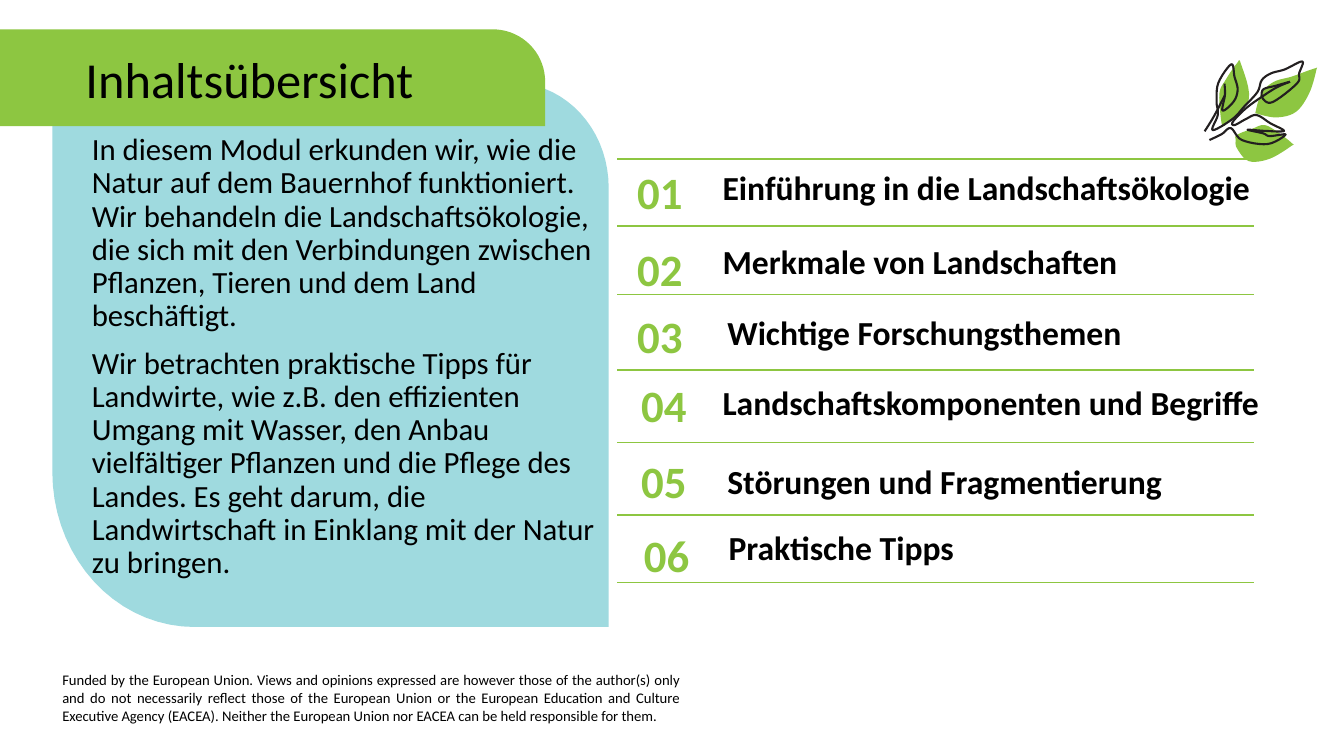
"""Build the overview slide of a module on landscape ecology."""
from dataclasses import dataclass
from math import cos, radians, sin

from lxml.etree import SubElement
from pptx import Presentation
from pptx.dml.color import RGBColor
from pptx.enum.shapes import MSO_CONNECTOR
from pptx.enum.text import MSO_ANCHOR, MSO_AUTO_SIZE, PP_ALIGN
from pptx.oxml.ns import qn
from pptx.util import Cm, Pt

Point = tuple[float, float]
GREEN, AQUA, INK, BLACK = "8DC641", "9FDADF", "231F20", "000000"
RULE_LEFT, RULE_RIGHT = 15.54, 31.6
RULE_TOPS = (4.01, 5.69, 7.42, 9.32, 11.15, 12.98, 14.68)


@dataclass
class Topic:
    title: str
    number_at: Point
    title_at: Point
    width: float = 12.4


TOPICS = [
    Topic("Einführung in die Landschaftsökologie", (15.65, 3.96), (17.96, 3.84), 14.76),
    Topic("Merkmale von Landschaften", (15.65, 5.89), (17.96, 5.69)),
    Topic("Wichtige Forschungsthemen", (15.65, 7.59), (18.08, 7.47)),
    Topic("Landschaftskomponenten und Begriffe", (15.75, 9.32), (17.96, 9.25), 14.38),
    Topic("Störungen und Fragmentierung", (15.75, 11.23), (18.08, 11.23)),
    Topic("Praktische Tipps", (15.82, 13.11), (18.11, 12.9)),
]

INTRO = [
    "In diesem Modul erkunden wir, wie die Natur auf dem Bauernhof funktioniert. "
    "Wir behandeln die Landschaftsökologie, die sich mit den Verbindungen zwischen "
    "Pflanzen, Tieren und dem Land beschäftigt.",
    "Wir betrachten praktische Tipps für Landwirte, wie z.B. den effizienten Umgang "
    "mit Wasser, den Anbau vielfältiger Pflanzen und die Pflege des Landes. Es geht "
    "darum, die Landwirtschaft in Einklang mit der Natur zu bringen.",
]

FUNDING = (
    "Funded by the European Union. Views and opinions expressed are however those of "
    "the author(s) only and do not necessarily reflect those of the European Union or "
    "the European Education and Culture Executive Agency (EACEA). Neither the European "
    "Union nor EACEA can be held responsible for them."
)

LEAVES = [
    [(30.91, 3.12), (31.47, 2.51), (31.27, 1.6), (31.17, 1.6), (30.89, 2.01),
     (30.73, 2.36), (30.78, 3.07), (30.84, 3.15)],
    [(32.66, 2.82), (32.99, 2.36), (33.17, 1.78), (33.12, 1.73), (32.56, 1.93),
     (32.11, 2.06), (31.8, 2.34), (31.65, 2.79), (31.7, 2.87), (32.18, 2.96)],
    [(32.54, 3.68), (32.56, 3.61), (32.16, 3.3), (31.85, 3.15), (31.55, 3.25),
     (31.27, 3.35), (31.14, 3.43), (31.14, 3.51), (31.17, 3.73), (31.47, 4.06),
     (32.0, 4.0)],
]

TWIGS = [
    [(30.66, 2.62), (30.7, 2.1), (31.03, 1.62), (31.11, 1.93), (31.19, 2.26),
     (31.09, 2.56), (30.81, 2.79), (30.87, 2.4), (30.86, 2.11)],
    [(30.87, 2.4), (30.67, 2.79), (30.53, 3.04), (30.36, 3.31)],
    [(30.66, 2.62), (30.69, 2.9), (30.56, 3.28), (31.06, 3.0), (31.37, 2.67),
     (31.69, 2.32), (31.8, 2.02), (32.03, 1.85), (32.38, 1.75), (32.82, 1.55),
     (32.74, 1.85), (32.69, 2.1), (32.08, 2.57), (31.83, 2.49), (31.83, 2.26),
     (32.16, 2.16), (32.51, 2.06)],
    [(32.51, 2.06), (32.18, 2.2), (31.83, 2.42), (31.4, 2.73), (31.07, 3.07),
     (31.12, 3.15), (31.4, 3.0), (31.67, 2.9), (32.02, 3.11), (32.36, 3.3),
     (31.9, 3.3), (31.44, 3.27), (31.83, 3.36), (32.0, 3.43), (32.4, 3.39),
     (31.95, 3.63), (31.3, 3.53), (31.02, 3.23), (30.79, 3.38), (30.48, 3.53)],
]


def colour(code: str) -> RGBColor:
    return RGBColor.from_string(code)


def corner(centre: Point, radius: Point, start: int) -> list[Point]:
    angles = [radians(start + step) for step in range(0, 91, 5)]
    return [(centre[0] + radius[0] * cos(a), centre[1] + radius[1] * sin(a)) for a in angles]


def curve(knots: list[Point], closed: bool, steps: int = 6) -> list[Point]:
    ends = (knots[-1:], knots[:2]) if closed else (knots[:1], knots[-1:])
    padded = ends[0] + knots + ends[1]
    points = []
    for a, b, c, d in zip(padded, padded[1:], padded[2:], padded[3:]):
        for step in range(steps):
            t = step / steps
            points.append(tuple(
                b[i] + 0.5 * t * (c[i] - a[i]
                + t * (2 * a[i] - 5 * b[i] + 4 * c[i] - d[i]
                + t * (3 * (b[i] - c[i]) + d[i] - a[i])))
                for i in (0, 1)))
    return points if closed else points + knots[-1:]


def draw_outline(shapes, points: list[Point], fill: str = "", line: str = "") -> None:
    corners = [(Cm(x), Cm(y)) for x, y in points]
    builder = shapes.build_freeform(*corners[0])
    builder.add_line_segments(corners[1:], close=bool(fill))
    outline = builder.convert_to_shape()
    outline.shadow.inherit = False
    if fill:
        outline.fill.solid()
        outline.fill.fore_color.rgb = colour(fill)
        outline.line.fill.background()
    else:
        outline.fill.background()
        outline.line.color.rgb = colour(line)
        outline.line.width = Pt(1.5)


def draw_rule(shapes, top: float) -> None:
    rule = shapes.add_connector(
        MSO_CONNECTOR.STRAIGHT, Cm(RULE_RIGHT), Cm(top), Cm(RULE_LEFT), Cm(top))
    rule.line.color.rgb = colour(GREEN)
    rule.line.width = Pt(1)
    SubElement(rule._element.spPr, qn("a:effectLst"))


def write(holder, paragraphs: list[str], box: tuple[float, float, float, float], *,
          size: float, ink: str = BLACK, bold: bool = False, align=PP_ALIGN.LEFT,
          anchor=MSO_ANCHOR.MIDDLE, spacing: float = 0.9, gap: float = 0) -> None:
    holder.left, holder.top, holder.width, holder.height = map(Cm, box)
    frame = holder.text_frame
    frame.word_wrap = True
    frame.auto_size = MSO_AUTO_SIZE.NONE
    frame.vertical_anchor = anchor
    for index, text in enumerate(paragraphs):
        paragraph = frame.add_paragraph() if index else frame.paragraphs[0]
        properties = paragraph._p.get_or_add_pPr()
        properties.set("marL", "0")
        properties.set("indent", "0")
        SubElement(properties, qn("a:buNone"))
        paragraph.text = text
        paragraph.alignment = align
        paragraph.line_spacing = spacing
        paragraph.space_before = Pt(gap if index else 0)
        paragraph.font.name = "Calibri"
        paragraph.font.size = Pt(size)
        paragraph.font.bold = bold
        paragraph.font.color.rgb = colour(ink)


def add_text(shapes, text: str, box: tuple[float, float, float, float], **style) -> None:
    write(shapes.add_textbox(0, 0, 0, 0), [text], box, **style)


def main() -> None:
    deck = Presentation()
    deck.slide_width, deck.slide_height = Cm(33.87), Cm(19.05)
    slide = deck.slides.add_slide(deck.slide_layouts[1])
    shapes = slide.shapes
    heading, intro = shapes.title, slide.placeholders[1]

    panel = [(15.34, 15.8), *corner((4.9, 11.89), (3.58, 3.91), 90), (1.32, 2.08),
             *corner((12.9, 4.72), (2.44, 2.64), 270)]
    banner = [(0, 3.18), (0, 0.74), *corner((12.42, 2.06), (1.32, 1.32), 270), (13.74, 3.18)]
    draw_outline(shapes, panel, fill=AQUA)
    draw_outline(shapes, banner, fill=GREEN)
    for backdrop in list(shapes)[2:]:
        heading._element.addprevious(backdrop._element)

    write(heading, ["Inhaltsübersicht"], (1.9, 1.07, 14, 2.01), size=36)
    write(intro, INTRO, (2.06, 3.25, 13.18, 11.07), size=22, anchor=MSO_ANCHOR.TOP, gap=10)
    add_text(shapes, FUNDING, (1.32, 16.79, 16.08, 1.68), size=10.5,
             align=PP_ALIGN.JUSTIFY, anchor=MSO_ANCHOR.TOP, spacing=1)

    for top in RULE_TOPS:
        draw_rule(shapes, top)
    for number, topic in enumerate(TOPICS, 1):
        add_text(shapes, f"{number:02}", (*topic.number_at, 1.96, 1.91), size=32,
                 ink=GREEN, bold=True, align=PP_ALIGN.CENTER)
        add_text(shapes, topic.title, (*topic.title_at, topic.width, 1.9), size=24, bold=True)

    for leaf in LEAVES:
        draw_outline(shapes, curve(leaf, closed=True), fill=GREEN)
    for twig in TWIGS:
        draw_outline(shapes, curve(twig, closed=False), line=INK)
    deck.save("out.pptx")


if __name__ == "__main__":
    main()
